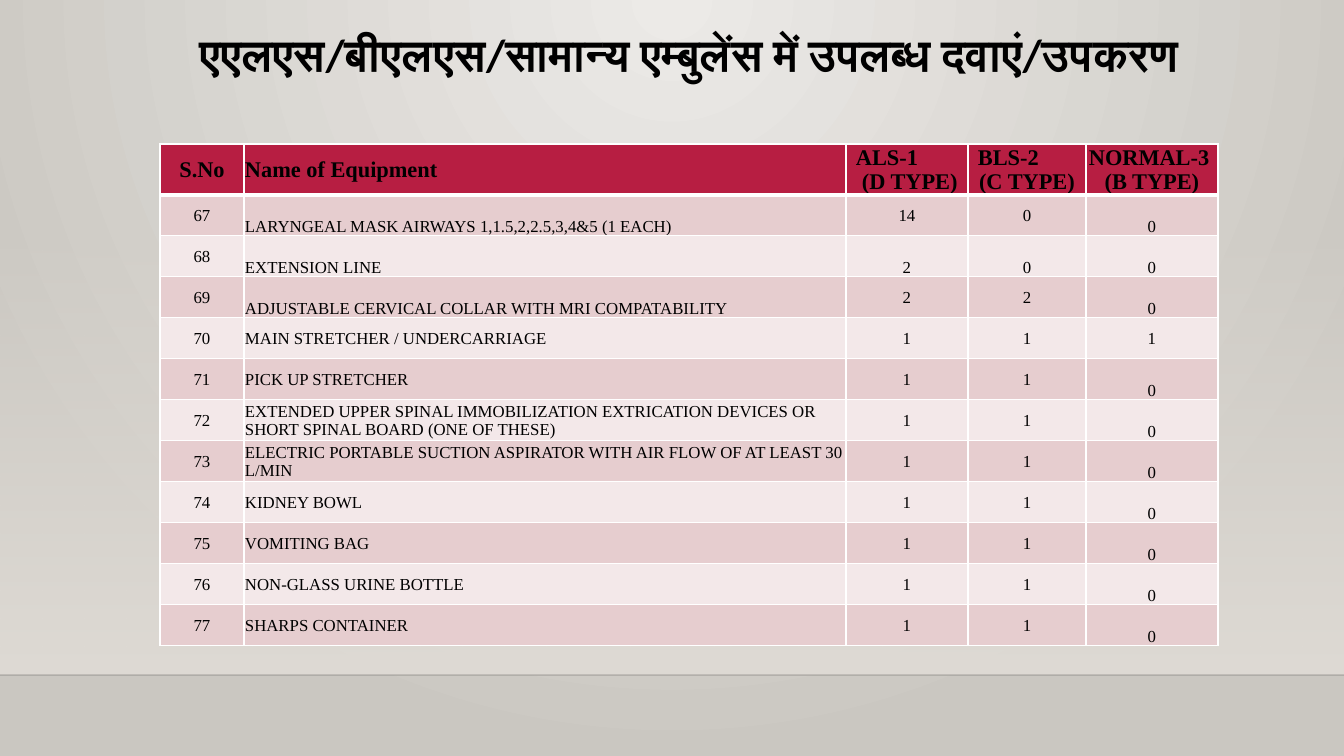
from lxml import etree
from pptx import Presentation
from pptx.dml.color import RGBColor
from pptx.enum.shapes import MSO_CONNECTOR, MSO_SHAPE
from pptx.enum.text import MSO_ANCHOR, MSO_AUTO_SIZE, PP_ALIGN
from pptx.oxml.ns import qn
from pptx.util import Pt

TITLE = "एएलएस/बीएलएस/सामान्य एम्बुलेंस में उपलब्ध दवाएं/उपकरण"
HEAD = ["S.No", "Name of Equipment", "ALS-1\n (D TYPE)",
        "BLS-2\n(C TYPE)", "NORMAL-3 \n(B TYPE)"]
# Name, three counts, and the anchor of each cell (m middle, b bottom)
ITEMS = [
    ("LARYNGEAL MASK AIRWAYS 1,1.5,2,2.5,3,4&5 (1 EACH)", 14, 0, 0, "mbmmb"),
    ("EXTENSION LINE", 2, 0, 0, "mbbbb"),
    ("ADJUSTABLE CERVICAL COLLAR WITH MRI COMPATABILITY", 2, 2, 0, "mbmmb"),
    ("MAIN STRETCHER / UNDERCARRIAGE", 1, 1, 1, "mmmmm"),
    ("PICK UP STRETCHER", 1, 1, 0, "mmmmb"),
    ("EXTENDED UPPER SPINAL IMMOBILIZATION EXTRICATION DEVICES OR "
     "SHORT SPINAL BOARD (ONE OF THESE)", 1, 1, 0, "mmmmb"),
    ("ELECTRIC PORTABLE SUCTION ASPIRATOR WITH AIR FLOW OF AT LEAST 30 L/MIN",
     1, 1, 0, "mmmmb"),
    ("KIDNEY BOWL", 1, 1, 0, "mmmmb"),
    ("VOMITING BAG", 1, 1, 0, "mmmmb"),
    ("NON-GLASS URINE BOTTLE", 1, 1, 0, "mmmmb"),
    ("SHARPS CONTAINER", 1, 1, 0, "mmmmb"),
]
FIRST = 67
COLS = [84, 602, 122, 118, 132]
HEAD_H, ROW_H = 50, 41
LEFT, TOP = 160, 144
WIDE, HIGH, FLOOR, WALL = 1344, 756, 675, 223
COLORS = {"head": "B71E42", "odd": "E6CDCF", "even": "F3E8E9",
          "rule": "FFFFFF", "text": "000000", "edge": "000001",
          "glow": "ECEAE7", "rim": "CAC7C1", "wall": "DFDBD5"}
ANCHORS = {"m": MSO_ANCHOR.MIDDLE, "b": MSO_ANCHOR.BOTTOM}
MID, START = PP_ALIGN.CENTER, PP_ALIGN.LEFT


def px(n):
    return round(n * 914400 / 100.8)


def rgb(key):
    return RGBColor.from_string(COLORS[key])


def sub(node, tag, **attrs):
    return etree.SubElement(node, qn(tag), attrs)


def blend(fill, first, last):
    """Make a two-stop gradient."""
    fill.gradient()
    for stop, key in zip(fill.gradient_stops, (first, last)):
        stop.color.rgb = rgb(key)


def style(font, name, size, bold):
    font.name, font.size, font.bold = name, Pt(size), bold
    font.color.rgb = rgb("text")


def border(cell, tag, width):
    line = sub(cell._tc.get_or_add_tcPr(), tag, w=str(Pt(width)))
    sub(sub(line, "a:solidFill"), "a:srgbClr", val=COLORS["rule"])


def fill_cell(cell, text, row, col, anchor):
    cell.margin_left = cell.margin_right = cell.margin_top = px(1)
    cell.margin_bottom = 0
    cell.vertical_anchor = ANCHORS[anchor]
    cell.text_frame.text = text
    for para in cell.text_frame.paragraphs:
        para.alignment = START if col == 1 else MID
        for run in para.runs:
            style(run.font, "Times New Roman", 12 if row else 16, row == 0)
    if row == 0 and col in (2, 3):
        lead = cell.text_frame.paragraphs[0]
        lead.alignment = START
        lead._p.get_or_add_pPr().set("marL", str(px(9)))
    for tag, width in (("a:lnL", 1), ("a:lnR", 1),
                       ("a:lnT", 3 if row == 1 else 1),
                       ("a:lnB", 1 if row else 3)):
        border(cell, tag, width)
    cell.fill.solid()
    cell.fill.fore_color.rgb = rgb(
        "head" if row == 0 else "odd" if row % 2 else "even")


def add_back(slide):
    blend(slide.background.fill, "glow", "rim")
    grad = slide.element.find(".//" + qn("a:gradFill"))
    grad.remove(grad.find(qn("a:lin")))
    sub(sub(grad, "a:path", path="circle"), "a:fillToRect",
        l="43000", t="0", r="43000", b="100000")

    wall = slide.shapes.add_shape(MSO_SHAPE.RECTANGLE, 0, px(WALL),
                                  px(WIDE), px(FLOOR - WALL))
    wall.shadow.inherit = False
    wall.line.fill.background()
    blend(wall.fill, "wall", "wall")
    wall.fill.gradient_angle = 270
    sub(wall._element.find(".//" + qn("a:srgbClr")), "a:alpha", val="0")

    edge = slide.shapes.add_connector(MSO_CONNECTOR.STRAIGHT, 0, px(FLOOR),
                                      px(WIDE), px(FLOOR))
    edge.line.width = Pt(1)
    edge.line.color.rgb = rgb("edge")
    sub(edge._element.find(".//" + qn("a:srgbClr")), "a:alpha", val="20000")
    sub(edge._element.spPr, "a:effectLst")


def add_title(slide):
    title = slide.shapes.title
    title.left, title.top = px(LEFT), px(28)
    title.width, title.height = px(sum(COLS)), px(116)
    frame = title.text_frame
    frame.text = TITLE
    frame.word_wrap = True
    frame.auto_size = MSO_AUTO_SIZE.NONE
    frame.vertical_anchor = MSO_ANCHOR.TOP
    para = frame.paragraphs[0]
    para.alignment, para.line_spacing = MID, 0.9
    run = para.runs[0]
    style(run.font, "Calibri", 32, True)
    sub(run._r.get_or_add_rPr(), "a:cs", typeface="Calibri")


def add_grid(slide):
    rows = [(HEAD, "mmmmb")]
    for num, (name, *counts, anchors) in enumerate(ITEMS, FIRST):
        rows.append(([str(num), name, *map(str, counts)], anchors))
    high = HEAD_H + ROW_H * len(ITEMS)
    table = slide.shapes.add_table(len(rows), len(COLS), px(LEFT), px(TOP),
                                   px(sum(COLS)), px(high)).table
    for col, width in zip(table.columns, COLS):
        col.width = px(width)
    for r, (texts, anchors) in enumerate(rows):
        table.rows[r].height = px(ROW_H if r else HEAD_H)
        for c, (text, anchor) in enumerate(zip(texts, anchors)):
            fill_cell(table.cell(r, c), text, r, c, anchor)


def main():
    deck = Presentation()
    deck.slide_width, deck.slide_height = px(WIDE), px(HIGH)
    slide = deck.slides.add_slide(deck.slide_layouts[5])
    add_back(slide)
    add_title(slide)
    add_grid(slide)
    deck.save("out.pptx")


if __name__ == "__main__":
    main()
